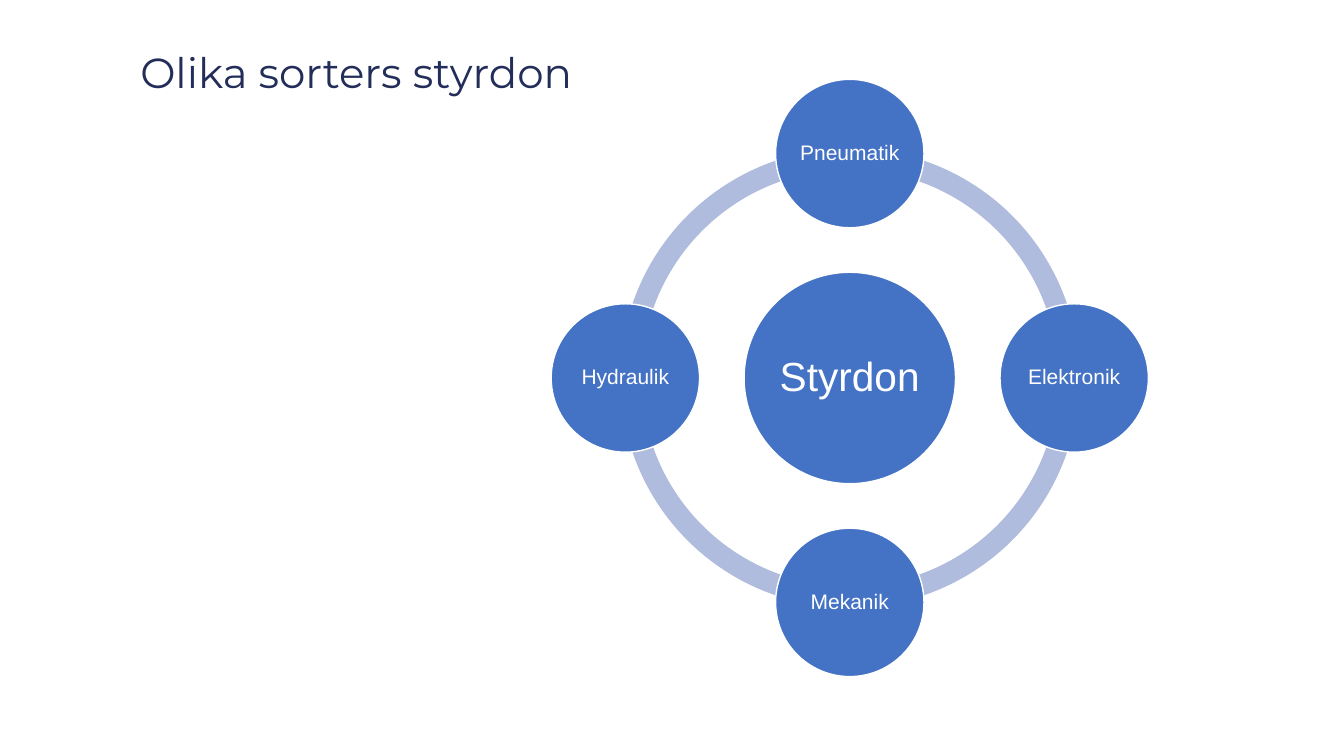
from math import cos, radians, sin

from pptx import Presentation
from pptx.dml.color import RGBColor
from pptx.enum.shapes import MSO_SHAPE as SHAPE
from pptx.enum.text import MSO_ANCHOR as ANCHOR, MSO_AUTO_SIZE as AUTO_SIZE, PP_ALIGN as ALIGN
from pptx.util import Pt

COLORS = {"title": "222D59", "ring": "B0BCDE", "node": "4472C4", "white": "FFFFFF"}


def rgb(name):
    return RGBColor.from_string(COLORS[name])


def format_text(tf, text, font, size, color, align):
    tf.text = text
    tf.auto_size = AUTO_SIZE.NONE
    tf.vertical_anchor = ANCHOR.MIDDLE
    p = tf.paragraphs[0]
    p.alignment = align
    p.line_spacing = 0.9
    p.font.name = font
    p.font.size = Pt(size)
    p.font.color.rgb = rgb(color)


def add_title(slide, text, left, top, width, height):
    sp = slide.shapes.title
    sp.left, sp.top, sp.width, sp.height = Pt(left), Pt(top), Pt(width), Pt(height)
    format_text(sp.text_frame, text, "Montserrat", 30, "title", ALIGN.LEFT)
    sp.text_frame.word_wrap = True


def add_round(slide, kind, cx, cy, size, fill):
    """Add a filled shape of equal sides around a centre point."""
    sp = slide.shapes.add_shape(kind, Pt(cx - size / 2), Pt(cy - size / 2), Pt(size), Pt(size))
    sp.shadow.inherit = False
    sp.fill.solid()
    sp.fill.fore_color.rgb = rgb(fill)
    sp.line.fill.background()
    return sp


def add_node(slide, text, cx, cy, size, font_size):
    sp = add_round(slide, SHAPE.OVAL, cx, cy, size, "node")
    sp.line.color.rgb = rgb("white")
    sp.line.width = Pt(1)
    tf = sp.text_frame
    tf.margin_left = tf.margin_right = tf.margin_top = tf.margin_bottom = Pt(2)
    format_text(tf, text, "Arial", font_size, "white", ALIGN.CENTER)
    tf.word_wrap = False


def add_radial_cycle(slide, hub, spokes, left, top, size):
    cx, cy = left + size / 2, top + size / 2
    node_size = 106
    orbit = (size - node_size) / 2
    step = 360 / len(spokes)

    # Ring segments; angles are stored in units of 1/0.6 degree
    for i in range(len(spokes)):
        arc = add_round(slide, SHAPE.BLOCK_ARC, cx, cy, 328, "ring")
        arc.adjustments[0] = i * step * 0.6
        arc.adjustments[1] = (i + 1) * step % 360 * 0.6
        arc.adjustments[2] = 0.046

    # Hub, then the outer circles clockwise from the top
    add_node(slide, hub, cx, cy, 151, 29)
    for i, text in enumerate(spokes):
        angle = radians(i * step - 90)
        add_node(slide, text, cx + orbit * cos(angle), cy + orbit * sin(angle), node_size, 15)


def main():
    prs = Presentation()
    prs.slide_width, prs.slide_height = Pt(960), Pt(540)
    slide = prs.slides.add_slide(prs.slide_layouts[5])
    add_title(slide, "Olika sorters styrdon", 93, 1.5, 638, 104)
    add_radial_cycle(slide, "Styrdon", ["Pneumatik", "Elektronik", "Mekanik", "Hydraulik"],
                     393.7, 56.7, 426.6)
    prs.save("out.pptx")


if __name__ == "__main__":
    main()
